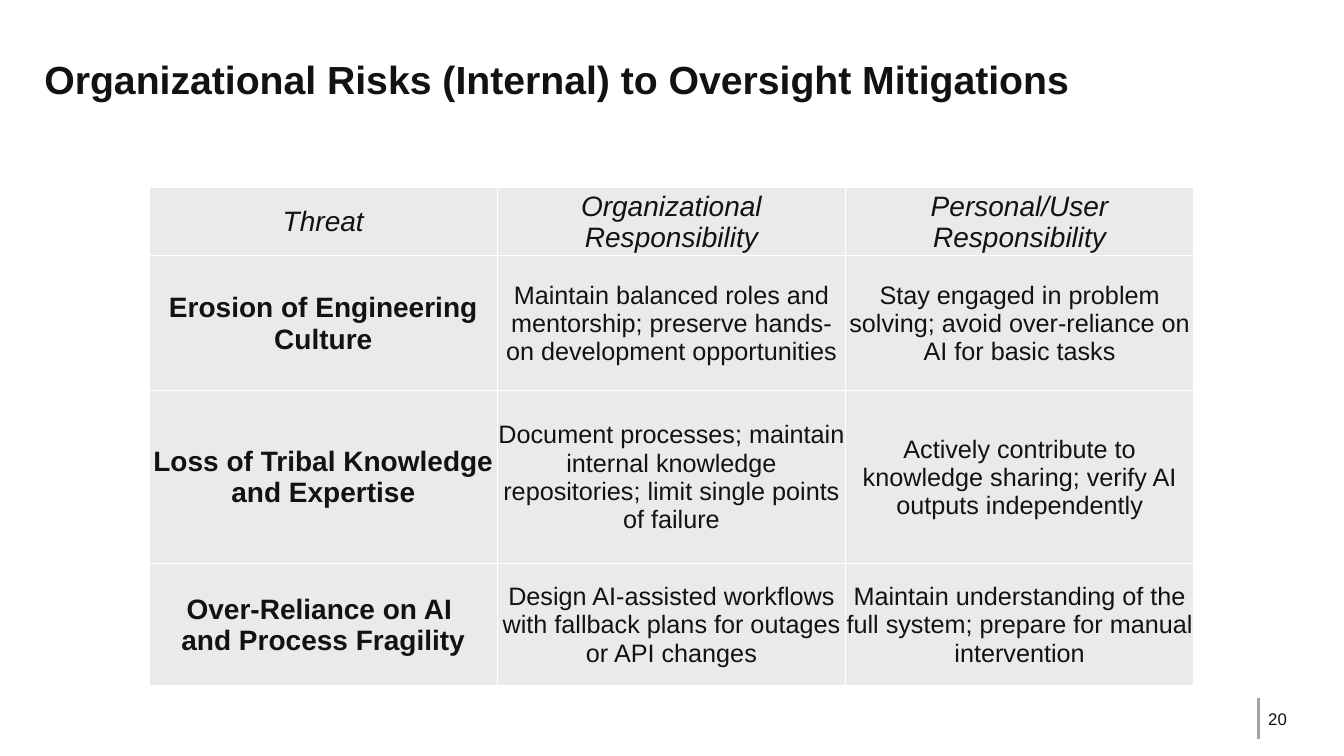
from dataclasses import dataclass

from lxml import etree
from pptx import Presentation
from pptx import util as u
from pptx.dml import color
from pptx.enum import shapes, text
from pptx.oxml import ns


@dataclass(frozen=True)
class Theme:
    font: str = "Arial"
    ink: str = "121212"
    cell_fill: str = "EBEAE9"
    border: str = "FFFFFF"
    rule: str = "A3A3A3"
    title_size: int = 28
    heading_size: int = 20
    body_size: int = 18
    number_size: int = 12


@dataclass(frozen=True)
class Risk:
    threat: str
    organization: str
    user: str
    height: float


THEME = Theme()
HEADER = Risk("Threat", "Organizational Responsibility", "Personal/User Responsibility", 0.49)
RISKS = [
    Risk(
        "Erosion of Engineering Culture",
        "Maintain balanced roles and mentorship; preserve hands-on development opportunities",
        "Stay engaged in problem solving; avoid over-reliance on AI for basic tasks",
        1.34,
    ),
    Risk(
        "Loss of Tribal Knowledge and Expertise",
        "Document processes; maintain internal knowledge repositories; limit single points of failure",
        "Actively contribute to knowledge sharing; verify AI outputs independently",
        1.71,
    ),
    Risk(
        "Over-Reliance on AI \nand Process Fragility",
        "Design AI-assisted workflows with fallback plans for outages or API changes",
        "Maintain understanding of the full system; prepare for manual intervention",
        1.22,
    ),
]


def format_text(text_frame, size: int, align, bold: bool = False, italic: bool = False) -> None:
    for paragraph in text_frame.paragraphs:
        paragraph.alignment = align
        for run in paragraph.runs:
            run.font.name = THEME.font
            run.font.size = u.Pt(size)
            run.font.bold = bold
            run.font.italic = italic
            run.font.color.rgb = color.RGBColor.from_string(THEME.ink)


def add_borders(cell) -> None:
    properties = cell._tc.get_or_add_tcPr()
    for side in ("a:lnL", "a:lnR", "a:lnT", "a:lnB"):
        border = etree.SubElement(properties, ns.qn(side), w=str(u.Pt(1)))
        fill = etree.SubElement(border, ns.qn("a:solidFill"))
        etree.SubElement(fill, ns.qn("a:srgbClr"), val=THEME.border)


def fill_cell(cell, wording: str, size: int, bold: bool, italic: bool) -> None:
    add_borders(cell)
    cell.fill.solid()
    cell.fill.fore_color.rgb = color.RGBColor.from_string(THEME.cell_fill)
    cell.margin_left = cell.margin_top = cell.margin_right = u.Inches(0.01)
    cell.margin_bottom = 0
    cell.vertical_anchor = text.MSO_ANCHOR.MIDDLE
    cell.text_frame.text = wording
    format_text(cell.text_frame, size, text.PP_ALIGN.CENTER, bold, italic)


def add_title(slide) -> None:
    title = slide.shapes.title
    title.left, title.top = u.Inches(0.34), u.Inches(0.34)
    title.width, title.height = u.Inches(12.65), u.Inches(0.89)
    title.text_frame.text = "Organizational Risks (Internal) to Oversight Mitigations"
    title.text_frame.vertical_anchor = text.MSO_ANCHOR.MIDDLE
    format_text(title.text_frame, THEME.title_size, text.PP_ALIGN.LEFT, bold=True)


def add_risk_table(slide) -> None:
    rows = [HEADER, *RISKS]
    frame = slide.shapes.add_table(
        len(rows), 3, u.Inches(1.48), u.Inches(1.86), u.Inches(10.36), u.Inches(4.94)
    )
    table = frame.table
    table.first_row = False
    table.horz_banding = False
    for row_index, risk in enumerate(rows):
        table.rows[row_index].height = u.Inches(risk.height)
        is_header = risk is HEADER
        for column_index, wording in enumerate((risk.threat, risk.organization, risk.user)):
            is_threat = column_index == 0
            size = THEME.heading_size if is_header or is_threat else THEME.body_size
            fill_cell(
                table.cell(row_index, column_index),
                wording,
                size,
                bold=is_threat and not is_header,
                italic=is_header,
            )


def add_page_number(slide) -> None:
    left = u.Inches(12.48)
    rule = slide.shapes.add_connector(
        shapes.MSO_CONNECTOR.STRAIGHT, left, u.Inches(6.92), left, u.Inches(7.33)
    )
    rule.line.color.rgb = color.RGBColor.from_string(THEME.rule)
    rule.line.width = u.Pt(2)
    etree.SubElement(rule._element.spPr, ns.qn("a:effectLst"))
    number = slide.shapes.add_textbox(left, u.Inches(6.98), u.Inches(0.52), u.Inches(0.27))
    number.text_frame.word_wrap = True
    number.text_frame.text = "20"
    format_text(number.text_frame, THEME.number_size, text.PP_ALIGN.LEFT)


def main() -> None:
    presentation = Presentation()
    presentation.slide_width = u.Inches(13.33)
    presentation.slide_height = u.Inches(7.5)
    slide = presentation.slides.add_slide(presentation.slide_layouts[5])
    add_page_number(slide)
    add_title(slide)
    add_risk_table(slide)
    presentation.save("out.pptx")


if __name__ == "__main__":
    main()
